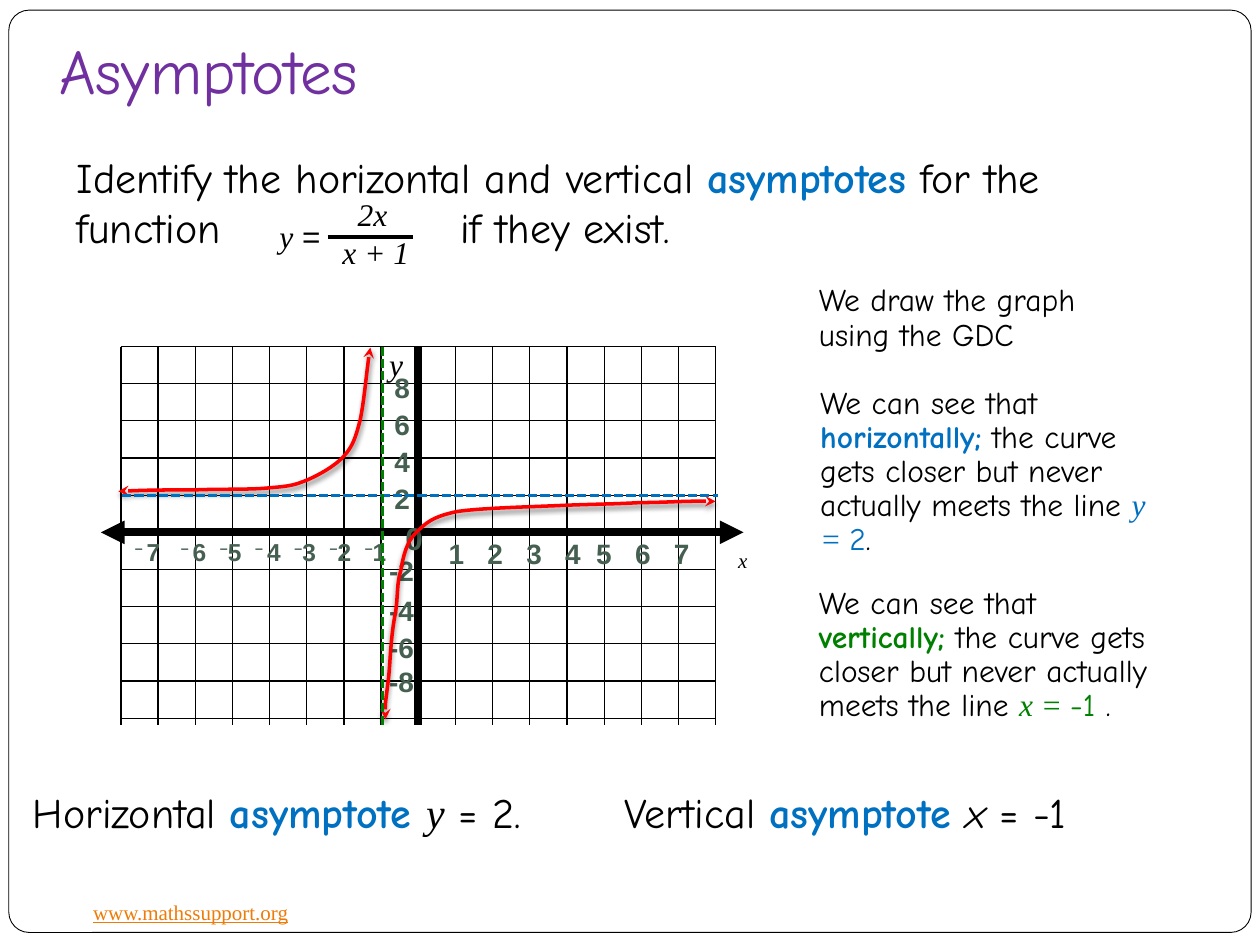
from lxml.etree import SubElement as Sub
from pptx import Presentation
from pptx.dml.color import RGBColor
from pptx.enum.dml import MSO_LINE_DASH_STYLE as Dash
from pptx.enum.shapes import MSO_CONNECTOR as Conn, MSO_SHAPE as Shape
from pptx.enum.text import MSO_ANCHOR as Anchor, PP_ALIGN as Align
from pptx.oxml.ns import qn
from pptx.util import Inches, Pt

W, H = Inches(10), Inches(7.5)
CELL, GRID_X, GRID_Y = Inches(0.295), Inches(0.96), Inches(2.75)
COLS, ROWS, X_AXIS, Y_AXIS, GRID_END = 16, 10, 5, 8, 10.17
COMIC, TIMES, ARIAL = "Comic Neue", "Times New Roman", "Arial"
BLACK, WHITE, BLUE, GREEN, RED = "000000", "FFFFFF", "0070C0", "008000", "FF0000"
PURPLE, ORANGE, SLATE = "7030A0", "EE7B08", "455F51"
THIN = [0.08, 0.04, 0.08, 0.04]

LEFT_BRANCH = [
    (-0.07, 3.9), (0.61, 3.86), (1.29, 3.86), (1.97, 3.86), (2.64, 3.83),
    (3.53, 3.86), (4.03, 3.8), (4.54, 3.76), (4.68, 3.73), (5.02, 3.59),
    (5.32, 3.46), (5.76, 3.22), (6, 2.95), (6.24, 2.68), (6.31, 2.47),
    (6.44, 1.97), (6.54, 1.49), (6.64, 0.37), (6.71, 0.03)]
RIGHT_BRANCH = [
    (7.12, 10.03), (7.12, 9.86), (7.08, 9.86), (7.19, 9.02), (7.25, 8.54),
    (7.25, 7.83), (7.39, 7.15), (7.46, 6.68), (7.42, 6.37), (7.53, 6.03),
    (7.59, 5.66), (7.69, 5.25), (7.93, 5.02), (8.2, 4.75), (8.37, 4.58),
    (9.05, 4.44), (9.73, 4.34), (11.19, 4.31), (12, 4.27), (12.81, 4.24),
    (13.29, 4.24), (13.97, 4.2), (14.64, 4.2), (15.29, 4.14), (16, 4.17)]


def rgb(color):
    """Turn a hex string into a colour."""
    return RGBColor.from_string(color)


def share(x, y, w, h):
    """Give a box from percentages of the slide's size."""
    return [int(W * x / 100), int(H * y / 100), int(W * w / 100), int(H * h / 100)]


def at(col, row):
    """Give the point of the graph grid at a column and row."""
    return int(GRID_X + CELL * col), int(GRID_Y + CELL * row)


def cells(col, row, w, h):
    """Give a box from columns and rows of the graph grid."""
    return [*at(col, row), int(CELL * w), int(CELL * h)]


def add_run(p, size, text, font=COMIC, color=BLACK, style="", gap=0):
    """Add one run; style letters are b, i, u and ^, gap is letter spacing in points."""
    r = p.add_run()
    r.text = text
    f = r.font
    f.size, f.name, f.color.rgb = Pt(size), font, rgb(color)
    f.bold, f.italic, f.underline = "b" in style, "i" in style, "u" in style
    if "^" in style:
        r._r.get_or_add_rPr().set("baseline", "30000")
    if gap:
        r._r.get_or_add_rPr().set("spc", str(round(gap * 100)))


def fill_text(sp, runs, size, inset=(0.1, 0.05, 0.1, 0.05), anchor=Anchor.TOP,
              wrap=True, spacing=None):
    """Write the runs as the only paragraph of a shape."""
    tf = sp.text_frame
    tf.word_wrap, tf.vertical_anchor = wrap, anchor
    tf.margin_left, tf.margin_top, tf.margin_right, tf.margin_bottom = map(Inches, inset)
    p = tf.paragraphs[0]
    p.alignment, p.space_before = Align.LEFT, Pt(0)
    if spacing:
        p.line_spacing = spacing
    pPr = p._p.get_or_add_pPr()
    pPr.set("marL", "0")
    pPr.set("indent", "0")
    Sub(pPr, qn("a:buNone"))
    for run in runs:
        add_run(p, size, *run)


def add_text(s, box, runs, size, **options):
    """Add a text box."""
    fill_text(s.shapes.add_textbox(*box), runs, size, **options)


def fill_placeholder(sp, box, runs, size, **options):
    """Move a placeholder and write its text."""
    sp.left, sp.top, sp.width, sp.height = box
    fill_text(sp, runs, size, **options)


def add_arrowheads(sp, kind):
    """Put an arrowhead on both ends of a line."""
    ln = sp.element.spPr.find(qn("a:ln"))
    for end in ("a:headEnd", "a:tailEnd"):
        Sub(ln, qn(end), type=kind)


def add_line(s, start, end, width=0.75, color=BLACK, dash=None):
    """Add a straight line between two points."""
    c = s.shapes.add_connector(Conn.STRAIGHT, *start, *end)
    c.line.color.rgb, c.line.width = rgb(color), Pt(width)
    if dash:
        c.line.dash_style = dash
    Sub(c.element.spPr, qn("a:effectLst"))
    return c


def add_curve(s, nodes):
    """Add one red branch of cubic curves with its shadow."""
    points = [at(*node) for node in nodes]
    builder = s.shapes.build_freeform(*points[0])
    builder.add_line_segments(points[1:], close=False)
    sp = builder.convert_to_shape()
    outline = next(sp.element.iter(qn("a:path")))
    steps = outline.findall(qn("a:lnTo"))
    for i in range(0, len(steps), 3):
        cubic = Sub(outline, qn("a:cubicBezTo"))
        for step in steps[i:i + 3]:
            cubic.append(step[0])
            outline.remove(step)
    sp.fill.background()
    sp.line.color.rgb, sp.line.width = rgb(RED), Pt(2)
    add_arrowheads(sp, "stealth")
    sp.shadow.inherit = False
    effects = sp.element.spPr.find(qn("a:effectLst"))
    shadow = Sub(effects, qn("a:outerShdw"), blurRad=str(Pt(3)), dist=str(Pt(2)),
                 dir="5400000", rotWithShape="0")
    Sub(Sub(shadow, qn("a:srgbClr"), val=BLACK), qn("a:alpha"), val="50000")


def add_frame(s):
    """Add the rounded border and the web address."""
    sp = s.shapes.add_shape(Shape.ROUNDED_RECTANGLE, *share(0.7, 1.07, 98.6, 97.6))
    sp.adjustments[0] = 0.022
    sp.fill.background()
    sp.line.color.rgb, sp.line.width = rgb(BLACK), Pt(0.5)
    sp.shadow.inherit = False
    add_text(s, share(6.4, 94.53, 17.7, 4),
             [("www.mathssupport.org", TIMES, ORANGE, "u")], 12, wrap=False)


def add_axis_labels(s):
    """Add the numbers along both axes."""
    for value in range(-8, 9, 2):
        left = 7.32 if value == 0 else 7.02 if value > 0 else 6.88
        lift = 0.61 if value in (-2, -8) else 0.53
        add_text(s, cells(left, X_AXIS - value / 2 - lift, 1.6, 1.25),
                 [(str(value), ARIAL, SLATE, "b")], 16 if value else 18)
    positives, negatives = [], []
    for n in range(1, 8):
        positives.append((str(n), ARIAL, SLATE, "b"))
        if n < 7:
            positives.append((" ", ARIAL, SLATE, "b", 4.45 if n == 4 else 8.9))
    for n in range(7, 0, -1):
        sign = "– " if n in (7, 6, 4) else "–"
        negatives += [(sign, ARIAL, SLATE, "b^"), (str(n), ARIAL, SLATE, "b")]
        if n > 1:
            negatives.append((" ", ARIAL, SLATE, "b", 7.78 if n == 7 else 3.89))
    add_text(s, cells(8.07, 4.95, 9.7, 1.25), positives, 16, inset=[0.22, 0.05, 0.1, 0.05])
    add_text(s, cells(-0.34, 4.95, 8.34, 1.15), negatives, 14, inset=[0.21, 0.05, 0, 0.05])


def add_graph(s):
    """Add the grid, the axes and their labels."""
    name = s.shapes.add_shape(Shape.RECTANGLE, *cells(6.88, -0.2, 1.36, 1.39))
    name.fill.solid()
    name.fill.fore_color.rgb = rgb(WHITE)
    name.line.fill.background()
    name.shadow.inherit = False
    fill_text(name, [("y", TIMES, BLACK, "i")], 18)
    for col in range(COLS + 1):
        add_line(s, at(col, 0), at(col, GRID_END))
    for row in range(ROWS + 1):
        add_line(s, at(0, row), at(COLS, row))
    add_line(s, at(Y_AXIS, 0), at(Y_AXIS, GRID_END), 4.5)
    add_arrowheads(add_line(s, at(-0.54, X_AXIS), at(16.75, X_AXIS), 4.5), "triangle")
    add_text(s, cells(16.27, 5.25, 1.63, 1.8), [("x", TIMES, BLACK, "i")], 12)
    add_axis_labels(s)


def add_formula(s):
    """Add the fraction that defines the function."""
    add_text(s, share(21.2, 22.27, 7, 5.4),
             [("y", TIMES, BLACK, "i"), (" =", ARIAL)], 18, anchor=Anchor.MIDDLE)
    add_text(s, share(27.4, 20, 4.4, 5.33), [("2x", TIMES, BLACK, "i")], 18, wrap=False)
    add_text(s, share(26.2, 24, 7.4, 5.33), [("x + 1", TIMES, BLACK, "i")], 18, wrap=False)
    add_line(s, share(26, 25.07, 0, 0)[:2], share(32.8, 25.07, 0, 0)[:2], 2)


def add_notes(s):
    """Add the explanations beside the graph and the answers below it."""
    look = dict(inset=THIN, spacing=0.9)
    add_text(s, share(64.2, 29.6, 25.7, 8.8), [("We draw the graph using the GDC",)], 18, **look)
    for box, word, color, letter, number in (
            (share(64.3, 40.4, 27.7, 19.73), "horizontally;", BLUE, "y", "2"),
            (share(64.2, 61.6, 27.7, 18.4), "vertically;", GREEN, "x", "-1 ")):
        add_text(s, box, [
            ("We can see that ",), (word, COMIC, color, "b"),
            (" the curve gets closer but never actually meets the line ",),
            (f"{letter} = ", TIMES, color, "i"), (number, COMIC, color), (".",)], 18, **look)
    for left, width, kind, letter, font, value in (
            (1.8, 45.1, "Horizontal ", "y", TIMES, " = 2."),
            (48.8, 42.5, "Vertical ", "x", COMIC, " = -1")):
        add_text(s, share(left, 83.33, width, 6.4), [
            (kind,), ("asymptote ", COMIC, BLUE, "b"),
            (letter, font, BLACK, "i"), (value,)], 24, **look)


def main():
    """Build the slide on asymptotes and save it."""
    prs = Presentation()
    prs.slide_width, prs.slide_height = W, H
    s = prs.slides.add_slide(prs.slide_layouts[1])
    fill_placeholder(s.shapes.title, share(3.7, 3.2, 80, 9.47),
                     [("Asymptotes", COMIC, PURPLE)], 36,
                     inset=[0.1, 0.05, 0.1, 0.1], anchor=Anchor.BOTTOM)
    fill_placeholder(s.placeholders[1], share(5.1, 15.33, 89.8, 10.93), [
        ("Identify the horizontal and vertical ",), ("asymptotes", COMIC, BLUE, "b"),
        (" for the function",), (" ", COMIC, BLACK, "", 129), ("if they exist.",)], 24)
    add_frame(s)
    add_graph(s)
    add_notes(s)
    add_formula(s)
    add_curve(s, LEFT_BRANCH)
    add_curve(s, RIGHT_BRANCH)
    add_line(s, at(0.03, 4), at(16.07, 4), 1.75, BLUE, Dash.SQUARE_DOT)
    add_line(s, at(7.05, 0), at(7.05, GRID_END), 1.75, GREEN, Dash.SQUARE_DOT)
    prs.save("out.pptx")


if __name__ == "__main__":
    main()
